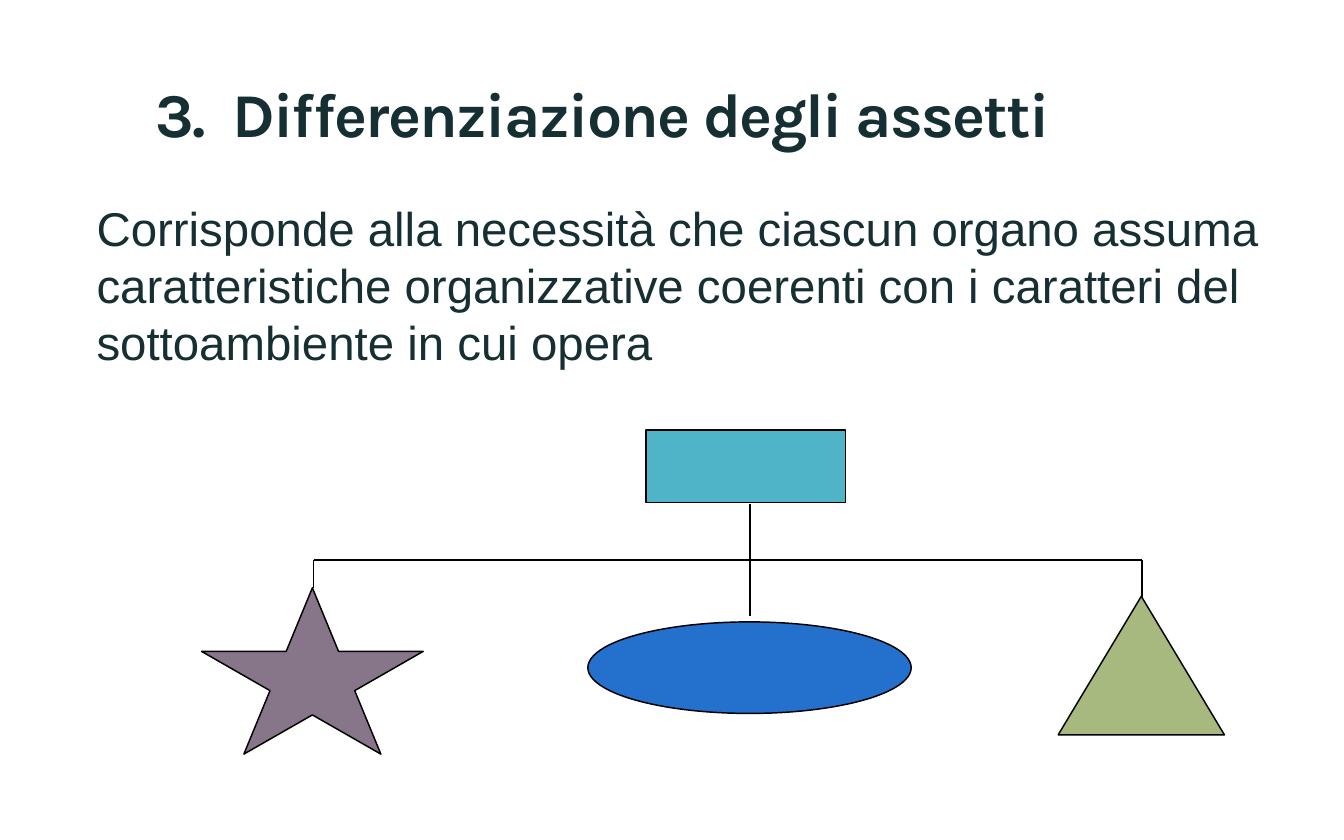
from lxml.etree import SubElement
from pptx import Presentation
from pptx.dml.color import RGBColor
from pptx.enum.shapes import MSO_CONNECTOR, MSO_SHAPE
from pptx.enum.text import MSO_ANCHOR, MSO_AUTO_SIZE, PP_ALIGN
from pptx.oxml.ns import qn
from pptx.util import Cm, Pt

# Content
TITLE = "3.  Differenziazione degli assetti"
BODY = ("Corrisponde alla necessità che ciascun organo assuma "
        "caratteristiche organizzative coerenti con i caratteri del "
        "sottoambiente in cui opera")
HEX = {"ink": "162F33", "line": "000000", "head": "50B4C8",
       "oval": "2370CD", "peak": "A8B97F", "star": "877589"}

# Organs: kind, colour, left, top, width, height in cm
ORGANS = [
    (MSO_SHAPE.RECTANGLE, "head", 15.39, 10.24, 4.75, 1.73),
    (MSO_SHAPE.OVAL, "oval", 14, 14.81, 7.7, 2.18),
    (MSO_SHAPE.ISOSCELES_TRIANGLE, "peak", 25.2, 14.2, 3.96, 3.3),
    (MSO_SHAPE.STAR_5_POINT, "star", 4.8, 14, 5.28, 3.96),
]

# Branch: the bar's height and the x of each drop
BAR = 13.34
LEFT, MID, RIGHT = 7.47, 17.86, 27.2
LINES = [
    (LEFT, BAR, RIGHT, BAR),
    (MID, 12, MID, 14.66),
    (RIGHT, BAR, RIGHT, 14.22),
    (LEFT, BAR, LEFT, 14),
]

# Format values: the slide is 907.25 by 567 points
PAGE = {"slide_width": Pt(907.25), "slide_height": Pt(567)}
TITLE_FONT = {"name": "Karla", "size": Pt(42), "bold": True}
BODY_FONT = {"name": "Arial", "size": Pt(32), "bold": False}
TITLE_FRAME = {"margin_left": Cm(2.1), "vertical_anchor": MSO_ANCHOR.MIDDLE,
               "word_wrap": True, "auto_size": MSO_AUTO_SIZE.NONE}
BODY_FRAME = {"margin_left": Cm(0.3), "margin_right": Cm(0.3),
              "margin_top": Cm(0.15), "margin_bottom": Cm(0.15),
              "vertical_anchor": MSO_ANCHOR.TOP, "word_wrap": True}


def color(name):
    return RGBColor.from_string(HEX[name])


def apply(target, values):
    for key, value in values.items():
        setattr(target, key, value)


def place(shape, *box):
    apply(shape, dict(zip(("left", "top", "width", "height"), map(Cm, box))))


def write(shape, text, frame, font, space):
    apply(shape.text_frame, frame)
    para = shape.text_frame.paragraphs[0]
    apply(para, {"alignment": PP_ALIGN.LEFT, "line_spacing": space})
    run = para.add_run()
    run.text = text
    apply(run.font, font)
    run.font.color.rgb = color("ink")
    return run


def stroke(shape):
    shape.line.color.rgb = color("line")
    shape.line.width = Pt(1)


def main():
    deck = Presentation()
    apply(deck, PAGE)
    slide = deck.slides.add_slide(deck.slide_layouts[5])
    shapes = slide.shapes

    # Title with tight letter spacing
    title = shapes.title
    place(title, 1.6, 0.81, 28.8, 4.01)
    run = write(title, TITLE, TITLE_FRAME, TITLE_FONT, 0.85)
    run._r.get_or_add_rPr().set("spc", "-114")

    # Body text
    body = shapes.add_textbox(Cm(2), Cm(4.6), Cm(28.8), Cm(4.37))
    write(body, BODY, BODY_FRAME, BODY_FONT, 1.0)

    # Organs
    for kind, tone, *box in ORGANS:
        organ = shapes.add_shape(kind, *map(Cm, box))
        organ.shadow.inherit = False
        organ.fill.solid()
        organ.fill.fore_color.rgb = color(tone)
        stroke(organ)

    # Branch lines
    for ends in LINES:
        line = shapes.add_connector(MSO_CONNECTOR.STRAIGHT, *map(Cm, ends))
        stroke(line)
        SubElement(line._element.spPr, qn("a:effectLst"))

    deck.save("out.pptx")


if __name__ == "__main__":
    main()
